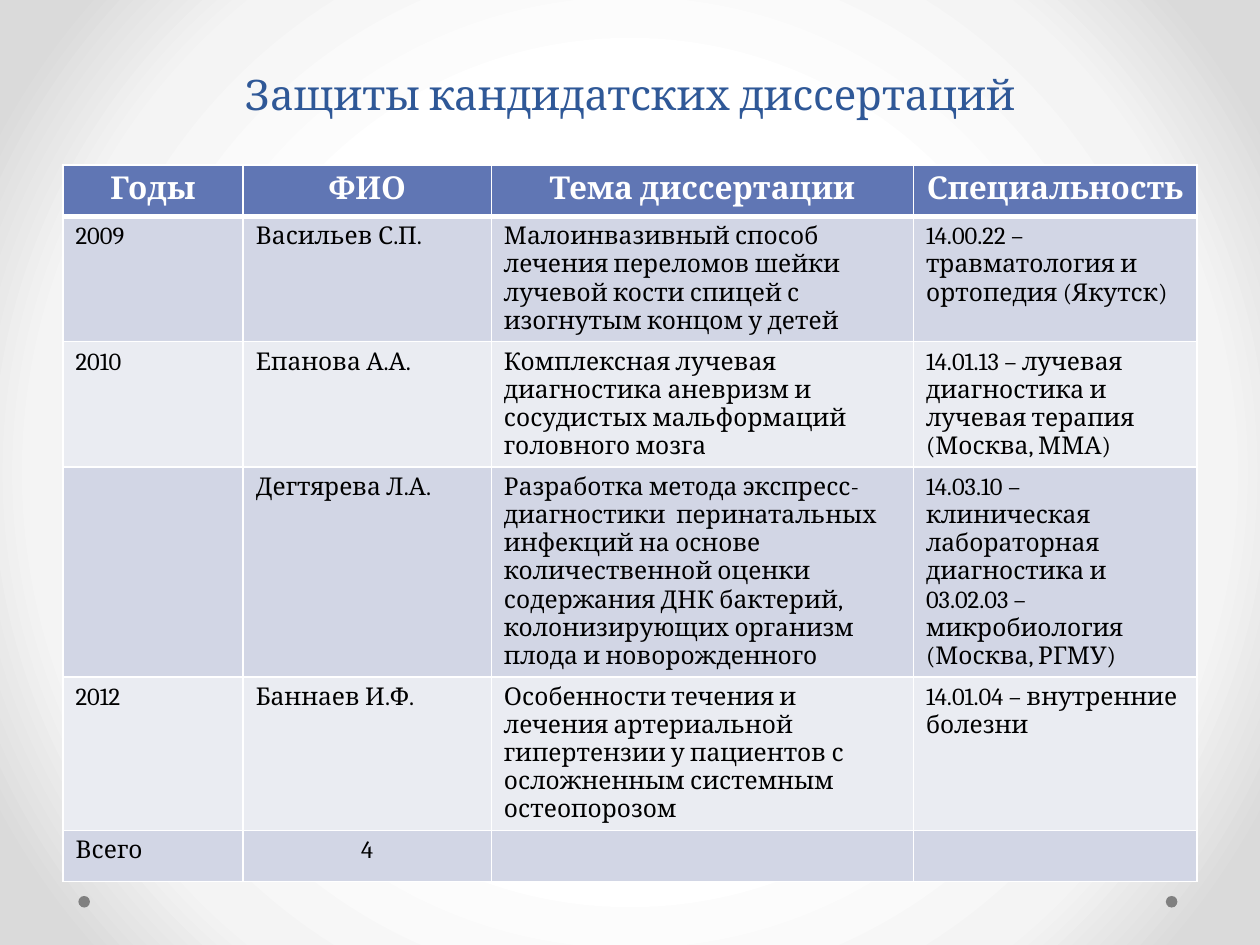
from lxml import etree
from pptx import Presentation
from pptx.dml.color import RGBColor
from pptx.enum import shapes, text
from pptx.oxml import parse_xml
from pptx.oxml.ns import nsdecls, qn
from pptx.util import Pt

FONT = "Cambria"
BLUE = RGBColor(0x2F, 0x58, 0x97)
HEADER = RGBColor(0x60, 0x76, 0xB4)
BANDS = (RGBColor(0xD2, 0xD6, 0xE5), RGBColor(0xEA, 0xEC, 0xF2))
GRAY = RGBColor(0x80, 0x80, 0x80)
WHITE = RGBColor(0xFF, 0xFF, 0xFF)
BLACK = RGBColor(0, 0, 0)
BACKGROUND = ((50, WHITE), (76, RGBColor(0xF4, 0xF4, 0xF4)),
              (92, RGBColor(0xDA, 0xDA, 0xDA)))

COLUMNS = (103, 141.8, 241.2, 162)
ROW_HEIGHT = 29.2
ROWS = (
    ("Годы", "ФИО", "Тема диссертации", "Специальность"),
    ("2009", "Васильев С.П.",
     "Малоинвазивный способ лечения переломов шейки лучевой кости спицей "
     "с изогнутым концом у детей",
     "14.00.22 – травматология и ортопедия (Якутск)"),
    ("2010", "Епанова А.А.",
     "Комплексная лучевая диагностика аневризм и сосудистых мальформаций "
     "головного мозга",
     "14.01.13 – лучевая диагностика и лучевая терапия (Москва, ММА)"),
    ("", "Дегтярева Л.А.",
     "Разработка метода экспресс-диагностики  перинатальных инфекций на основе "
     "количественной оценки содержания ДНК бактерий, колонизирующих организм "
     "плода и новорожденного",
     "14.03.10 – клиническая лабораторная диагностика и 03.02.03 – "
     "микробиология (Москва, РГМУ)"),
    ("2012", "Баннаев И.Ф.",
     "Особенности течения и лечения артериальной гипертензии у пациентов "
     "с осложненным системным остеопорозом",
     "14.01.04 – внутренние болезни"),
    ("Всего", "4", "", ""),
)


def write(tf, words, size=14, color=BLACK, bold=False, align=text.PP_ALIGN.LEFT):
    p = tf.paragraphs[0]
    p.alignment = align
    p.font.size = Pt(size)
    if words:
        r = p.add_run()
        r.text = words
        r.font.name, r.font.size, r.font.bold = FONT, Pt(size), bold
        r.font.color.rgb = color
    return p


def set_background(slide):
    """Radial gradient from the centre of the slide."""
    stops = "".join(f'<a:gs pos="{pos * 1000}"><a:srgbClr val="{color}"/></a:gs>'
                    for pos, color in BACKGROUND)
    bg = parse_xml(
        f'<p:bg {nsdecls("p", "a")}><p:bgPr><a:gradFill rotWithShape="1">'
        f'<a:gsLst>{stops}</a:gsLst><a:path path="circle">'
        '<a:fillToRect l="50000" t="50000" r="50000" b="50000"/></a:path>'
        '</a:gradFill><a:effectLst/></p:bgPr></p:bg>')
    slide.element.cSld.insert(0, bg)


def add_dots(slide, left, top, width, size):
    """One dot at each end of a strip."""
    for x in (left, left + width - size):
        sp = slide.shapes.add_shape(shapes.MSO_SHAPE.OVAL,
                                    Pt(x), Pt(top), Pt(size), Pt(size))
        sp.shadow.inherit = False
        sp.fill.solid()
        sp.fill.fore_color.rgb = GRAY
        sp.line.fill.background()


def place_title(slide, left, top, width, height):
    sp = slide.shapes.title
    sp.left, sp.top, sp.width, sp.height = Pt(left), Pt(top), Pt(width), Pt(height)
    sp.text_frame.vertical_anchor = text.MSO_ANCHOR.BOTTOM
    p = write(sp.text_frame, "Защиты кандидатских диссертаций", size=24,
              color=BLUE, align=text.PP_ALIGN.CENTER)
    p.line_spacing = Pt(58)


def set_borders(cell, **widths):
    tcPr = cell._tc.get_or_add_tcPr()
    for side in "LRTB":
        ln = etree.SubElement(tcPr, qn(f"a:ln{side}"), w=str(Pt(widths.get(side, 1))))
        fill = etree.SubElement(ln, qn("a:solidFill"))
        etree.SubElement(fill, qn("a:srgbClr"), val=str(WHITE))


def add_dissertations(slide, left, top):
    frame = slide.shapes.add_table(len(ROWS), len(COLUMNS), Pt(left), Pt(top),
                                   Pt(sum(COLUMNS)), Pt(ROW_HEIGHT * len(ROWS)))
    table = frame.table
    for column, width in zip(table.columns, COLUMNS):
        column.width = Pt(width)
    for i, row in enumerate(ROWS):
        for j, words in enumerate(row):
            cell = table.cell(i, j)
            set_borders(cell, T=3 if i == 1 else 1, B=3 if i == 0 else 1)
            cell.fill.solid()
            cell.fill.fore_color.rgb = BANDS[(i - 1) % 2] if i else HEADER
            if i == 0:
                write(cell.text_frame, words, size=18, color=WHITE, bold=True,
                      align=text.PP_ALIGN.CENTER)
            else:
                centred = (row[0], j) == ("Всего", 1)
                write(cell.text_frame, words, align=text.PP_ALIGN.CENTER
                      if centred else text.PP_ALIGN.LEFT)


def main():
    prs = Presentation()
    prs.slide_width, prs.slide_height = Pt(720), Pt(540)
    slide = prs.slides.add_slide(prs.slide_layouts[5])
    set_background(slide)
    add_dots(slide, 44.8, 512, 628, 6.6)
    place_title(slide, 36, 0, 648, 71.3)
    add_dissertations(slide, 36, 94.4)
    prs.save("out.pptx")


if __name__ == "__main__":
    main()
